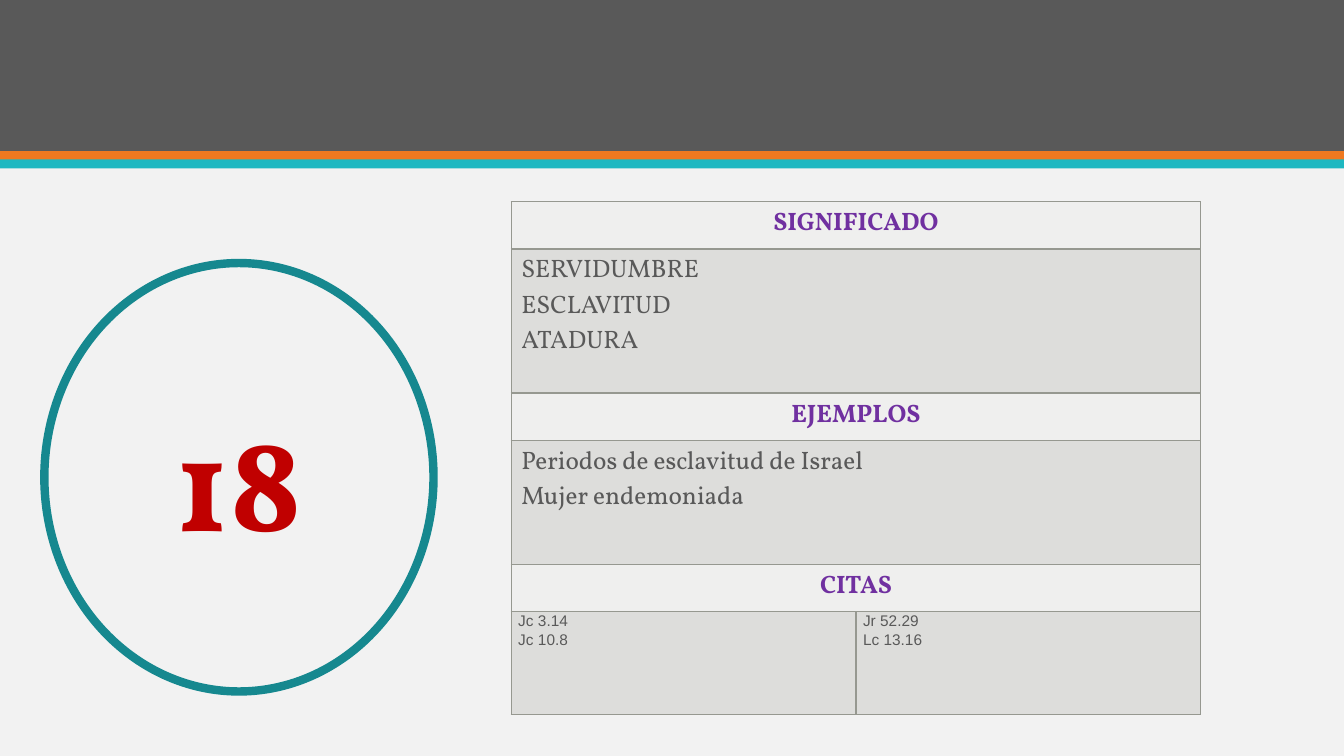
from lxml import etree
from pptx import Presentation
from pptx.dml.color import RGBColor
from pptx.enum.shapes import MSO_SHAPE as SHAPE
from pptx.enum.text import MSO_ANCHOR as ANCHOR, PP_ALIGN as ALIGN
from pptx.oxml.ns import qn
from pptx.util import Inches, Pt

THEME = {
    "bg": "F2F2F2", "band": "595959", "orange": "EF7920", "aqua": "1EB8C1",
    "ring": "16888F", "number": "C00000", "heading": "7030A0", "body": "595959",
    "head_fill": "EFEFEE", "body_fill": "DDDDDB", "border": "969890",
    "serif": "Vollkorn", "sans": "Arial",
    "number_size": 96, "text_size": 18, "cite_size": 11,
}


def write(tf, text, color="body", size="text_size", font="serif",
          bold=False, align=ALIGN.LEFT, spacing=None):
    for i, line in enumerate(text.split("\n")):
        p = tf.add_paragraph() if i else tf.paragraphs[0]
        p.alignment = align
        if spacing:
            p.line_spacing = spacing
        r = p.add_run()
        r.text = line
        r.font.name = THEME[font]
        r.font.size = Pt(THEME[size])
        r.font.bold = bold
        r.font.color.rgb = RGBColor.from_string(THEME[color])


def style_cell(cell, fill):
    cell.fill.solid()
    cell.fill.fore_color.rgb = RGBColor.from_string(THEME[fill])
    tcPr = cell._tc.get_or_add_tcPr()
    for i, side in enumerate(("lnL", "lnR", "lnT", "lnB")):
        ln = etree.Element(qn(f"a:{side}"), w=str(Pt(1)))
        solid = etree.SubElement(ln, qn("a:solidFill"))
        etree.SubElement(solid, qn("a:srgbClr"), val=THEME["border"])
        tcPr.insert(i, ln)


prs = Presentation()
prs.slide_width, prs.slide_height = Inches(13.33), Inches(7.5)
s = prs.slides.add_slide(prs.slide_layouts[6])
s.background.fill.solid()
s.background.fill.fore_color.rgb = RGBColor.from_string(THEME["bg"])

for top, height, color in ((0, 1.5, "band"), (1.5, 0.09, "orange"), (1.58, 0.09, "aqua")):
    sp = s.shapes.add_shape(SHAPE.RECTANGLE, 0, Inches(top), prs.slide_width, Inches(height))
    sp.shadow.inherit = False
    sp.fill.solid()
    sp.fill.fore_color.rgb = RGBColor.from_string(THEME[color])
    sp.line.fill.background()

ring = s.shapes.add_shape(SHAPE.OVAL, Inches(0.44), Inches(2.61), Inches(3.86), Inches(4.25))
ring.shadow.inherit = False
ring.fill.background()
ring.line.color.rgb = RGBColor.from_string(THEME["ring"])
ring.line.width = Pt(6)
ring.text_frame.vertical_anchor = ANCHOR.MIDDLE
write(ring.text_frame, "18", color="number", size="number_size", bold=True, align=ALIGN.CENTER)

sections = [
    ("SIGNIFICADO", 1.43, ["SERVIDUMBRE\nESCLAVITUD\nATADURA"]),
    ("EJEMPLOS", 1.23, ["Periodos de esclavitud de Israel\nMujer endemoniada"]),
    ("CITAS", 1.02, ["Jc 3.14\nJc 10.8", "Jr 52.29\nLc 13.16"]),
]
table = s.shapes.add_table(2 * len(sections), 2, Inches(5.07), Inches(2),
                           Inches(6.84), Inches(5.08)).table
table.first_row = table.horz_banding = False
for col in table.columns:
    col.width = Inches(3.42)

for i, (title, height, texts) in enumerate(sections):
    head, body = 2 * i, 2 * i + 1
    table.rows[head].height = Inches(0.47)
    table.rows[body].height = Inches(height)
    for col in range(2):
        style_cell(table.cell(head, col), "head_fill")
        style_cell(table.cell(body, col), "body_fill")
    table.cell(head, 0).merge(table.cell(head, 1))
    write(table.cell(head, 0).text_frame, title, color="heading", bold=True, align=ALIGN.CENTER)
    if len(texts) == 1:
        table.cell(body, 0).merge(table.cell(body, 1))
        write(table.cell(body, 0).text_frame, texts[0])
        continue
    for col, text in enumerate(texts):
        cell = table.cell(body, col)
        cell.margin_left = cell.margin_right = Inches(0.07)
        cell.margin_top = cell.margin_bottom = 0
        write(cell.text_frame, text, size="cite_size", font="sans",
              align=ALIGN.JUSTIFY, spacing=1.07)

prs.save("out.pptx")
